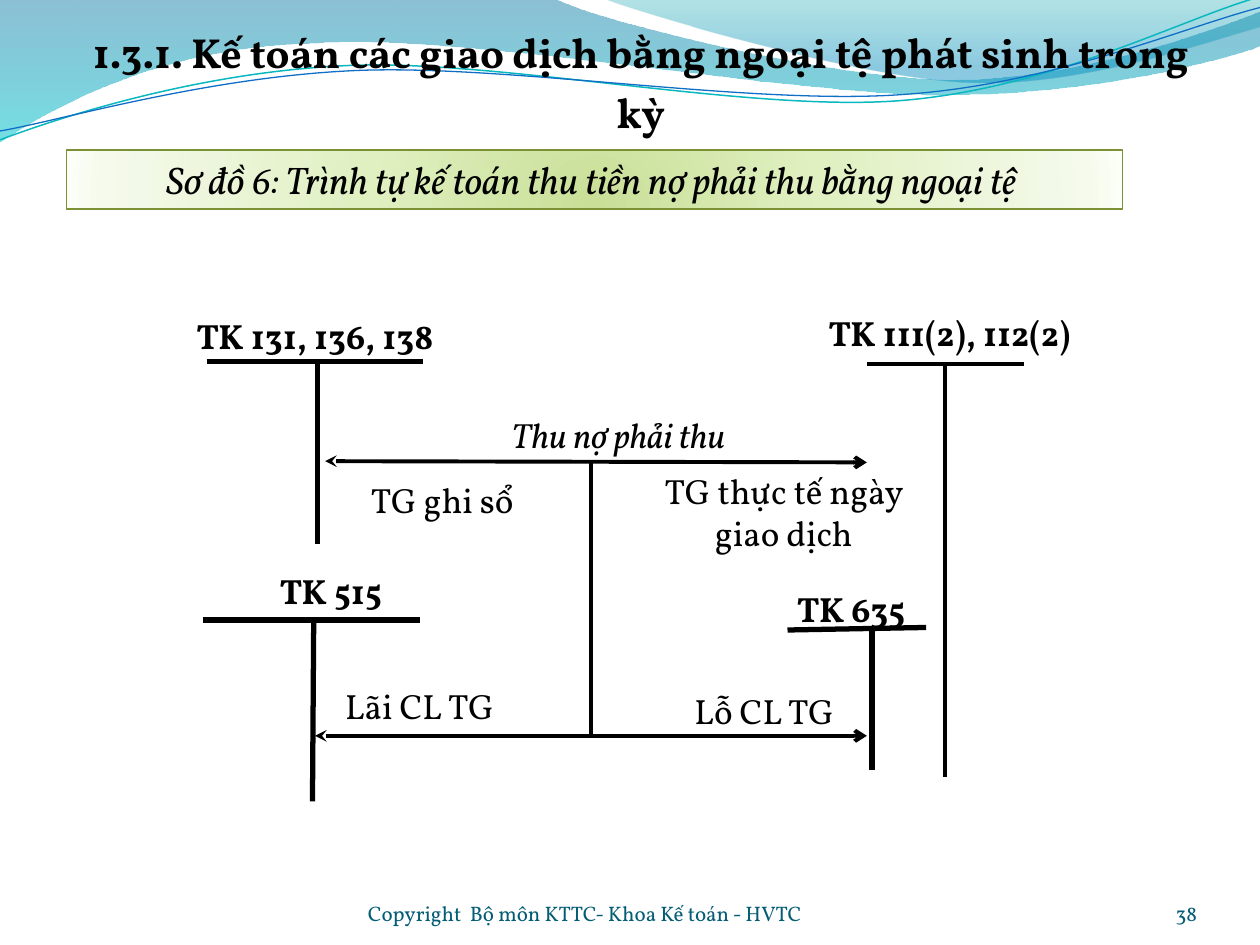
import math
from dataclasses import dataclass

from lxml import etree
from pptx import Presentation
from pptx import util as u
from pptx.dml.color import RGBColor
from pptx.enum import shapes, text
from pptx.oxml.ns import qn

FONT = "Vollkorn"
COLORS = {
    "ink": "000000", "footer": "045D75", "banner_line": "7B9135",
    "wave_teal": "0AB8BF", "wave_blue": "0F6FC6",
}
BANNER_STOPS = [(0, "C9DF97", 100), (43, "E0F0C1", 100), (93, "F5FAEC", 100), (100, "FCFEF8", 100)]
WAVE_TILT = -2.7

Point = tuple[float, float]
Box = tuple[float, float, float, float]
Line = tuple[float, float, float, float]
Stop = tuple[int, str, int]


@dataclass
class Wave:
    """Outline whose segments hold one point (straight) or three (cubic curve)."""
    start: Point
    segments: list[tuple[Point, ...]]
    stops: list[Stop] | None = None
    line: str = ""
    width: float = 0
    center: Point = (0, 0)
    tilt: float = 0


@dataclass
class Label:
    words: str
    box: Box
    size: float = 20
    bold: bool = False
    italic: bool = False
    color: str = "ink"
    align: text.PP_ALIGN = text.PP_ALIGN.CENTER
    anchor: text.MSO_ANCHOR = text.MSO_ANCHOR.TOP
    margins: Point = (0.1, 0.05)
    spacing: float = 1.0


@dataclass
class Account:
    title: str
    title_box: Box
    bar: Line
    stem: Line
    width: float = 3


WAVES = [
    Wave((0, 0), [
        ((4.4, -0.01),), ((4.76, 0.17), (6.64, 0.63), (7.58, 0.63)),
        ((8.53, 0.63), (9.58, 0.26), (10, 0.09)), ((10.01, 0.36),),
        ((9.83, 0.44), (8.7, 0.76), (7.46, 0.75)), ((6.22, 0.75), (3.82, 0.28), (2.57, 0.34)),
        ((1.29, 0.36), (0.46, 0.83), (-0.01, 1.13)), ((0, 0),),
    ], stops=[(0, "0074A1", 45), (100, "00C6CF", 55)]),
    Wave((4.79, -0.01), [
        ((5.09, 0.11), (6.82, 0.62), (7.69, 0.65)), ((8.56, 0.69), (9.61, 0.32), (10, 0.21)),
        ((10, 0),), ((4.79, -0.01),),
    ], stops=[(0, "00A1A9", 30), (80, "008BBF", 45)]),
    Wave((0, 1.11), [
        ((0.48, 0.93), (1.58, 0.57), (2.77, 0.52)), ((3.95, 0.47), (5.93, 0.89), (7.13, 0.8)),
        ((8.33, 0.71), (9.38, 0.15), (9.98, -0.02)),
    ], line="wave_teal", width=0.85, center=(4.99, 0.57), tilt=WAVE_TILT),
    Wave((0, 1.04), [
        ((0.47, 0.96), (1.64, 0.61), (2.83, 0.56)), ((4.03, 0.51), (5.97, 0.84), (7.17, 0.75)),
        ((8.36, 0.67), (9.41, 0.21), (10, 0.06)),
    ], line="wave_blue", width=0.75, center=(5, 0.59), tilt=WAVE_TILT),
]
ACCOUNTS = [
    Account("TK 131, 136, 138", (0.83, 2.45, 3.34, 0.44), (1.64, 2.87, 3.36, 2.87), (2.52, 2.89, 2.52, 4.32)),
    Account("TK 111(2), 112(2)", (5.23, 2.42, 4.61, 0.44), (6.88, 2.89, 8.13, 2.89), (7.5, 2.89, 7.5, 6.17), 2.25),
    Account("TK 515", (1.33, 4.47, 2.59, 0.44), (1.61, 4.92, 3.33, 4.92), (2.49, 4.93, 2.48, 6.36)),
    Account("TK 635", (5.39, 4.61, 2.73, 0.44), (6.25, 5, 7.35, 4.98), (6.92, 5, 6.92, 6.11)),
]
FLOWS: list[Line] = [(2.58, 3.66, 6.88, 3.67), (2.5, 5.84, 6.88, 5.84)]
FLOW_LINK: Line = (4.69, 3.65, 4.69, 5.84)
BANNER = Label("Sơ đồ 6: Trình tự kế toán thu tiền nợ phải thu bằng ngoại tệ ",
               (0.53, 1.19, 8.38, 0.47), 22, italic=True)
FOOTER_STYLE = dict(size=12, color="footer", anchor=text.MSO_ANCHOR.BOTTOM, margins=(0, 0))
LABELS = [
    Label("1.3.1. Kế toán các giao dịch bằng ngoại tệ phát sinh trong kỳ",
          (0.42, 0.08, 9.33, 0.55), 24, bold=True, spacing=1.2),
    Label("Thu nợ phải thu ", (2.67, 3.23, 4.53, 0.44), italic=True),
    Label("TG ghi sổ", (2.42, 3.75, 2.18, 0.44)),
    Label("TG thực tế ngày giao dịch", (5.05, 3.68, 2.34, 0.77)),
    Label("Lãi CL TG", (2.51, 5.38, 1.64, 0.44)),
    Label("Lỗ CL TG", (5.19, 5.42, 1.75, 0.44)),
    Label("Copyright  Bộ môn KTTC- Khoa Kế toán - HVTC", (2.92, 6.95, 3.67, 0.4),
          align=text.PP_ALIGN.LEFT, **FOOTER_STYLE),
    Label("38", (8.67, 6.95, 0.83, 0.4), align=text.PP_ALIGN.RIGHT, **FOOTER_STYLE),
]


def inches(values) -> list[u.Length]:
    return [u.Inches(value) for value in values]


def rgb(name: str) -> RGBColor:
    return RGBColor.from_string(COLORS[name])


def fill_gradient(shape, stops: list[Stop], radial: bool = False) -> None:
    """Fill from top to bottom, or around a circle, with stops of position, colour, opacity."""
    shape.fill.gradient()
    gradient = shape._element.spPr.find(qn("a:gradFill"))
    for child in list(gradient):
        gradient.remove(child)
    stop_list = etree.SubElement(gradient, qn("a:gsLst"))
    for position, color, opacity in stops:
        stop = etree.SubElement(stop_list, qn("a:gs"), pos=str(position * 1000))
        node = etree.SubElement(stop, qn("a:srgbClr"), val=color)
        etree.SubElement(node, qn("a:alpha"), val=str(opacity * 1000))
    if radial:
        circle = etree.SubElement(gradient, qn("a:path"), path="circle")
        etree.SubElement(circle, qn("a:fillToRect"), l="50000", t="130000", r="50000", b="-30000")
    else:
        etree.SubElement(gradient, qn("a:lin"), ang="5400000", scaled="1")


def level_point(wave: Wave, point: Point) -> list[u.Length]:
    """Turn a point back by the wave's tilt, which the shape's rotation then restores."""
    angle = math.radians(-wave.tilt)
    dx, dy = point[0] - wave.center[0], point[1] - wave.center[1]
    return inches((wave.center[0] + dx * math.cos(angle) - dy * math.sin(angle),
                   wave.center[1] + dx * math.sin(angle) + dy * math.cos(angle)))


def bend_segments(shape, segments: list[list[list[u.Length]]]) -> None:
    """Replace the straight segments that have control points by cubic curves."""
    left, top = shape.left, shape.top
    straight = list(shape._element.iter(qn("a:lnTo")))
    for node, points in zip(straight, segments):
        if len(points) == 3:
            curve = etree.Element(qn("a:cubicBezTo"))
            for x, y in points:
                etree.SubElement(curve, qn("a:pt"), x=str(x - left), y=str(y - top))
            node.getparent().replace(node, curve)


def draw_wave(slide, wave: Wave) -> None:
    segments = [[level_point(wave, point) for point in segment] for segment in wave.segments]
    builder = slide.shapes.build_freeform(*level_point(wave, wave.start))
    builder.add_line_segments([segment[-1] for segment in segments], close=bool(wave.stops))
    shape = builder.convert_to_shape()
    bend_segments(shape, segments)
    shape.rotation = wave.tilt
    shape.shadow.inherit = False
    if wave.stops:
        fill_gradient(shape, wave.stops)
        shape.line.fill.background()
    else:
        shape.fill.background()
        shape.line.color.rgb = rgb(wave.line)
        shape.line.width = u.Pt(wave.width)


def write_label(shape, label: Label) -> None:
    frame = shape.text_frame
    frame.text = label.words
    frame.word_wrap = True
    frame.vertical_anchor = label.anchor
    frame.margin_left = frame.margin_right = u.Inches(label.margins[0])
    frame.margin_top = frame.margin_bottom = u.Inches(label.margins[1])
    paragraph = frame.paragraphs[0]
    paragraph.alignment = label.align
    paragraph.line_spacing = label.spacing
    font = paragraph.runs[0].font
    font.name, font.size = FONT, u.Pt(label.size)
    font.bold, font.italic = label.bold, label.italic
    font.color.rgb = rgb(label.color)


def draw_label(slide, label: Label) -> None:
    write_label(slide.shapes.add_textbox(*inches(label.box)), label)


def draw_banner(slide) -> None:
    banner = slide.shapes.add_shape(shapes.MSO_SHAPE.RECTANGLE, *inches(BANNER.box))
    fill_gradient(banner, BANNER_STOPS, radial=True)
    banner.line.color.rgb = rgb("banner_line")
    banner.line.width = u.Pt(0.75)
    banner.shadow.inherit = False
    write_label(banner, BANNER)


def draw_line(slide, ends: Line, width: float = 2.25, arrows: bool = False) -> None:
    connector = slide.shapes.add_connector(shapes.MSO_CONNECTOR.STRAIGHT, *inches(ends))
    connector.line.color.rgb = rgb("ink")
    connector.line.width = u.Pt(width)
    if arrows:
        line = connector.line._get_or_add_ln()
        etree.SubElement(line, qn("a:headEnd"), type="stealth")
        etree.SubElement(line, qn("a:tailEnd"), type="arrow")
    etree.SubElement(connector._element.spPr, qn("a:effectLst"))


def draw_account(slide, account: Account) -> None:
    draw_line(slide, account.bar, account.width)
    draw_line(slide, account.stem, account.width)
    draw_label(slide, Label(account.title, account.title_box, bold=True))


def main() -> None:
    presentation = Presentation()
    presentation.slide_width, presentation.slide_height = inches((10, 7.5))
    slide = presentation.slides.add_slide(presentation.slide_layouts[6])
    for wave in WAVES:
        draw_wave(slide, wave)
    draw_banner(slide)
    for account in ACCOUNTS:
        draw_account(slide, account)
    draw_line(slide, FLOW_LINK)
    for flow in FLOWS:
        draw_line(slide, flow, arrows=True)
    for label in LABELS:
        draw_label(slide, label)
    presentation.save("out.pptx")


if __name__ == "__main__":
    main()
